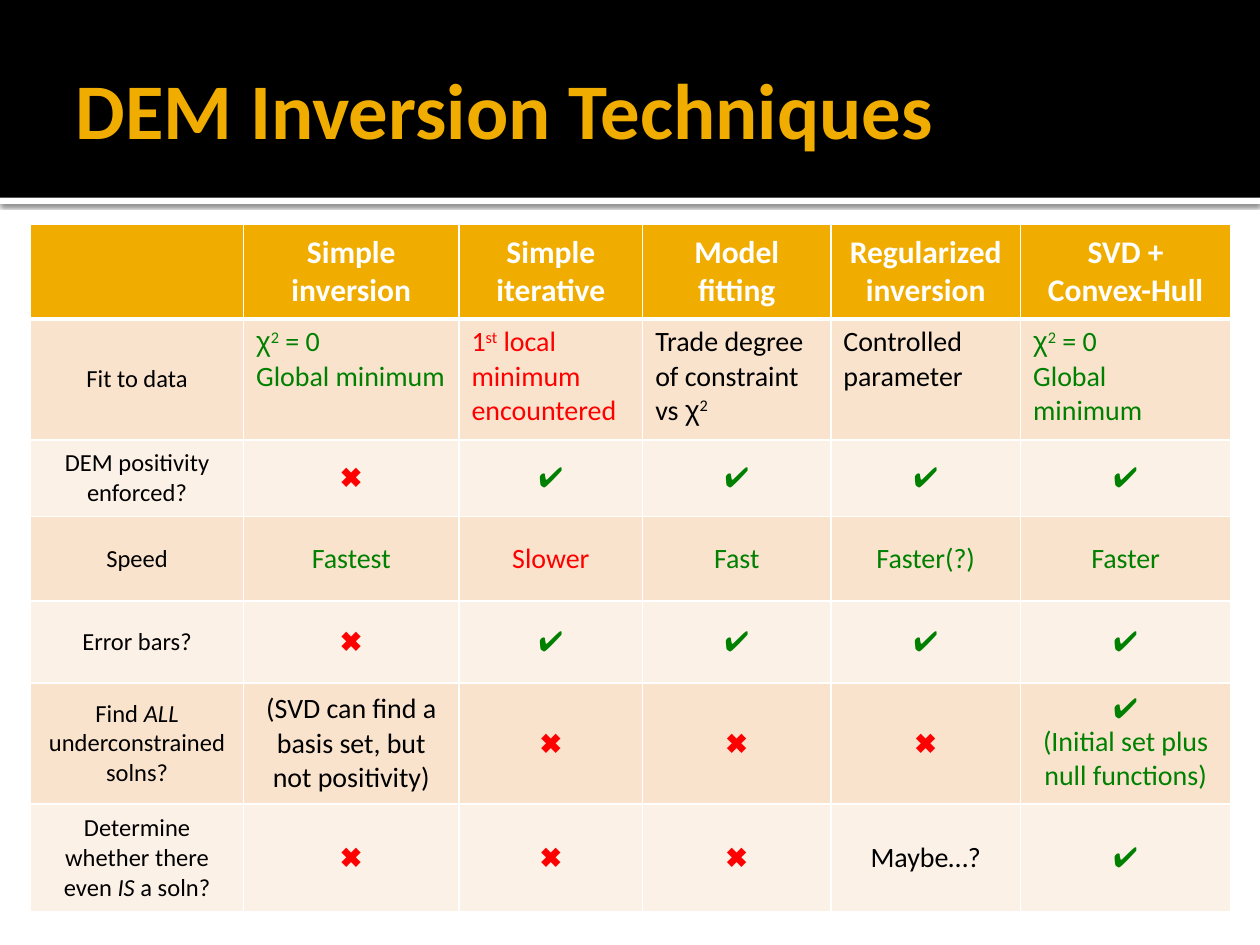
"""Build a slide that compares DEM inversion techniques in a table."""

import dataclasses
import typing

import lxml.etree
import pptx
import pptx.dml.color
import pptx.enum.shapes
import pptx.enum.text
import pptx.oxml
import pptx.oxml.ns
import pptx.util

Pt = pptx.util.Pt
Align = pptx.enum.text.PP_ALIGN
Anchor = pptx.enum.text.MSO_ANCHOR

WHITE, BLACK, GOLD = "FFFFFF", "000000", "F0AD00"
GREEN, RED = "008000", "FF0000"
BANDS = ("F9E3CC", "FCF1E7")
WIDTHS = (121.7, 123.1, 105, 107.5, 108.5, 120)
HEIGHTS = (54, 69.1, 43.9, 48.2, 46.8, 69.4, 61.5)


@dataclasses.dataclass(frozen=True)
class Run:
    """A stretch of text in one format."""

    text: str
    tint: str = BLACK
    size: float = 16
    font: str = "Calibri"
    bold: bool = False
    slant: bool = False
    raised: bool = False


@dataclasses.dataclass(frozen=True)
class Entry:
    """The paragraphs of one cell and their placing."""

    paras: tuple[tuple[Run, ...], ...]
    align: Align = Align.CENTER
    anchor: Anchor = Anchor.MIDDLE


def color(code: str) -> pptx.dml.color.RGBColor:
    """Turn a hex string into a colour."""
    return pptx.dml.color.RGBColor.from_string(code)


def words(text: str, tint: str = BLACK) -> Entry:
    """Make a centred entry of one run."""
    return Entry(((Run(text, tint),),))


def head(text: str) -> Entry:
    """Make a column heading."""
    return Entry(((Run(text, WHITE, 18, bold=True),),))


def label(text: str, stress: str = "", rest: str = "") -> Entry:
    """Make a row label with an optional slanted part."""
    parts = (Run(text, size=14), Run(stress, size=14, slant=True), Run(rest, size=14))
    return Entry((tuple(part for part in parts if part.text),))


def prose(*paras: tuple[Run, ...]) -> Entry:
    """Make an entry set at the top left."""
    return Entry(paras, Align.LEFT, Anchor.TOP)


def chi(tint: str) -> tuple[Run, Run]:
    """Make the runs of chi squared."""
    return Run("χ", tint, font="Arial"), Run("2", tint, raised=True)


CROSS = Run("✖", RED, font="Arial")
CHECK = Run("✔", GREEN, font="Arial")
NO, YES = Entry(((CROSS,),)), Entry(((CHECK,),))
EXACT = prose((*chi(GREEN), Run(" = 0", GREEN)), (Run("Global minimum", GREEN),))

ROWS = (
    (Entry(()), head("Simple inversion"), head("Simple iterative"),
     head("Model fitting"), head("Regularized inversion"), head("SVD + Convex-Hull")),
    (label("Fit to data"), EXACT,
     prose((Run("1", RED), Run("st", RED, raised=True),
            Run(" local minimum encountered", RED))),
     prose((Run("Trade degree of constraint vs "), *chi(BLACK))),
     prose((Run("Controlled parameter"),)), EXACT),
    (label("DEM positivity enforced?"), NO, YES, YES, YES, YES),
    (label("Speed"), words("Fastest", GREEN), words("Slower", RED),
     words("Fast", GREEN), words("Faster(?)", GREEN), words("Faster", GREEN)),
    (label("Error bars?"), NO, YES, YES, YES, YES),
    (label("Find ", "ALL ", "underconstrained solns?"),
     words("(SVD can find a basis set, but not positivity)"), NO, NO, NO,
     Entry(((CHECK,), (Run("(Initial set plus null functions)", GREEN),)))),
    (label("Determine whether there even ", "IS", " a soln?"),
     NO, NO, NO, words("Maybe…?"), YES),
)


def write(para: typing.Any, item: Run) -> None:
    """Add one run to a paragraph."""
    run = para.add_run()
    run.text = item.text
    font = run.font
    font.name, font.size = item.font, Pt(item.size)
    font.bold, font.italic = item.bold, item.slant
    font.color.rgb = color(item.tint)
    if item.raised:
        run._r.get_or_add_rPr().set("baseline", "30000")


def edge(cell: typing.Any, side: str, width: float) -> None:
    """Draw a white line on one side of a cell."""
    props = cell._tc.get_or_add_tcPr()
    props.append(pptx.oxml.parse_xml(
        f'<a:{side} {pptx.oxml.ns.nsdecls("a")} w="{Pt(width)}">'
        f'<a:solidFill><a:srgbClr val="{WHITE}"/></a:solidFill></a:{side}>'))


def fill(cell: typing.Any, entry: Entry, row: int) -> None:
    """Write and format one cell of the table."""
    for side in ("lnL", "lnR", "lnT", "lnB"):
        thick = (row, side) in ((0, "lnB"), (1, "lnT"))
        edge(cell, side, 3 if thick else 1)
    cell.fill.solid()
    cell.fill.fore_color.rgb = color(BANDS[(row - 1) % 2] if row else GOLD)
    cell.vertical_anchor = entry.anchor
    frame = cell.text_frame
    for spot, runs in enumerate(entry.paras):
        para = frame.add_paragraph() if spot else frame.paragraphs[0]
        para.alignment = entry.align
        for item in runs:
            write(para, item)


def band(slide: typing.Any, top: float, height: float, tint: str) -> typing.Any:
    """Draw a plain bar across the slide."""
    bar = slide.shapes.add_shape(
        pptx.enum.shapes.MSO_SHAPE.RECTANGLE, 0, Pt(top), Pt(720), Pt(height))
    bar.shadow.inherit = False
    bar.fill.solid()
    bar.fill.fore_color.rgb = color(tint)
    bar.line.fill.background()
    return bar


def shade(bar: typing.Any) -> None:
    """Drop a soft shadow below a bar."""
    effects = bar.element.spPr.find(pptx.oxml.ns.qn("a:effectLst"))
    shadow = lxml.etree.SubElement(
        effects, pptx.oxml.ns.qn("a:outerShdw"), blurRad=str(Pt(2.5)),
        dist=str(Pt(0.8)), dir="5400000", algn="tl", rotWithShape="0")
    tone = lxml.etree.SubElement(shadow, pptx.oxml.ns.qn("a:srgbClr"), val=BLACK)
    lxml.etree.SubElement(tone, pptx.oxml.ns.qn("a:alpha"), val="60000")


def name(slide: typing.Any, text: str) -> None:
    """Place the title above the bars."""
    title = slide.shapes.title
    title.left, title.top = Pt(36), Pt(12.2)
    title.width, title.height = Pt(648), Pt(98.6)
    frame = title.text_frame
    frame.auto_size = pptx.enum.text.MSO_AUTO_SIZE.NONE
    frame.word_wrap = True
    frame.vertical_anchor = Anchor.MIDDLE
    frame.margin_left = Pt(7.2)
    frame.margin_top = frame.margin_right = frame.margin_bottom = Pt(3.6)
    para = frame.paragraphs[0]
    para.alignment = Align.LEFT
    write(para, Run(text, GOLD, 45, bold=True))
    title.element.getparent().append(title.element)


def grid(slide: typing.Any) -> None:
    """Draw the table of techniques."""
    table = slide.shapes.add_table(
        len(ROWS), len(WIDTHS), Pt(17.5), Pt(128.2),
        Pt(sum(WIDTHS)), Pt(sum(HEIGHTS))).table
    for column, width in zip(table.columns, WIDTHS):
        column.width = Pt(width)
    for row, (height, entries) in enumerate(zip(HEIGHTS, ROWS)):
        table.rows[row].height = Pt(height)
        for place, entry in enumerate(entries):
            fill(table.cell(row, place), entry, row)


def main() -> None:
    """Build and save the slide."""
    deck = pptx.Presentation()
    deck.slide_width, deck.slide_height = Pt(720), Pt(540)
    slide = deck.slides.add_slide(deck.slide_layouts[5])
    shade(band(slide, 113, 3.6, WHITE))
    band(slide, 0, 113, BLACK)
    name(slide, "DEM Inversion Techniques")
    grid(slide)
    deck.save("out.pptx")


if __name__ == "__main__":
    main()
